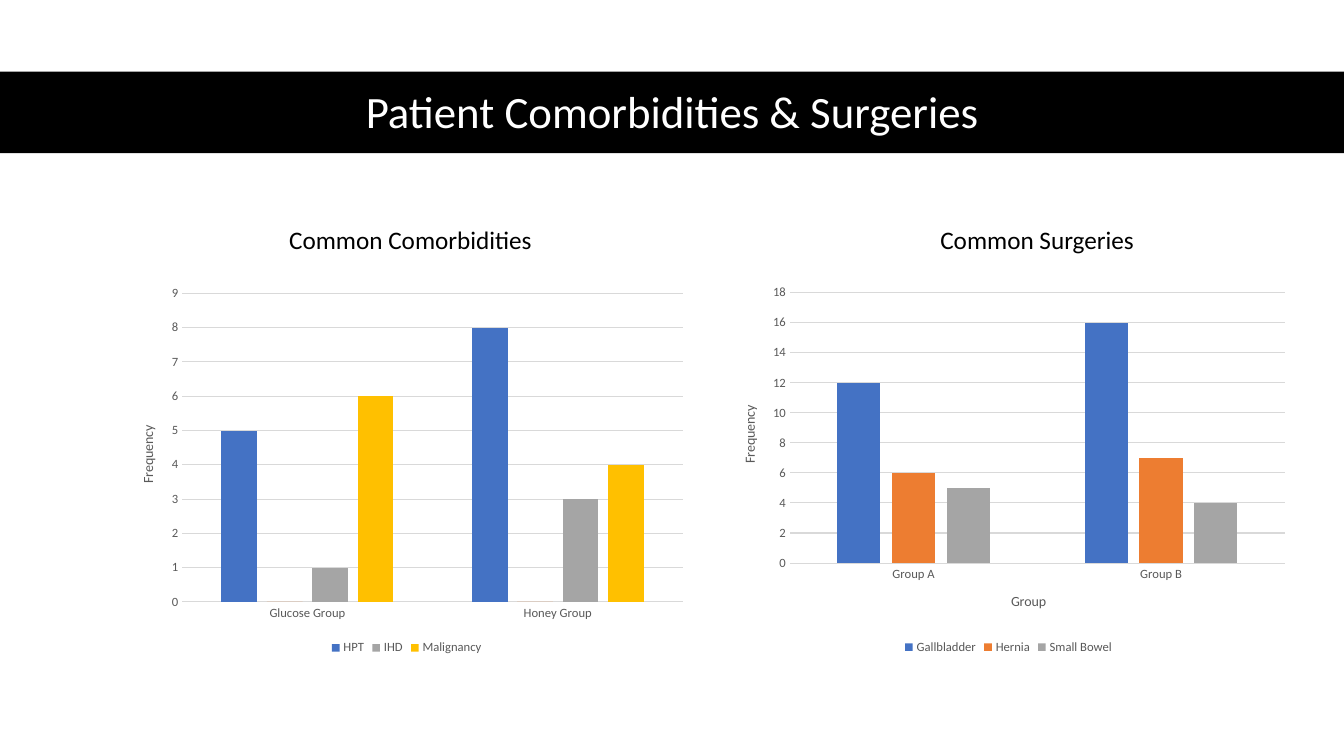
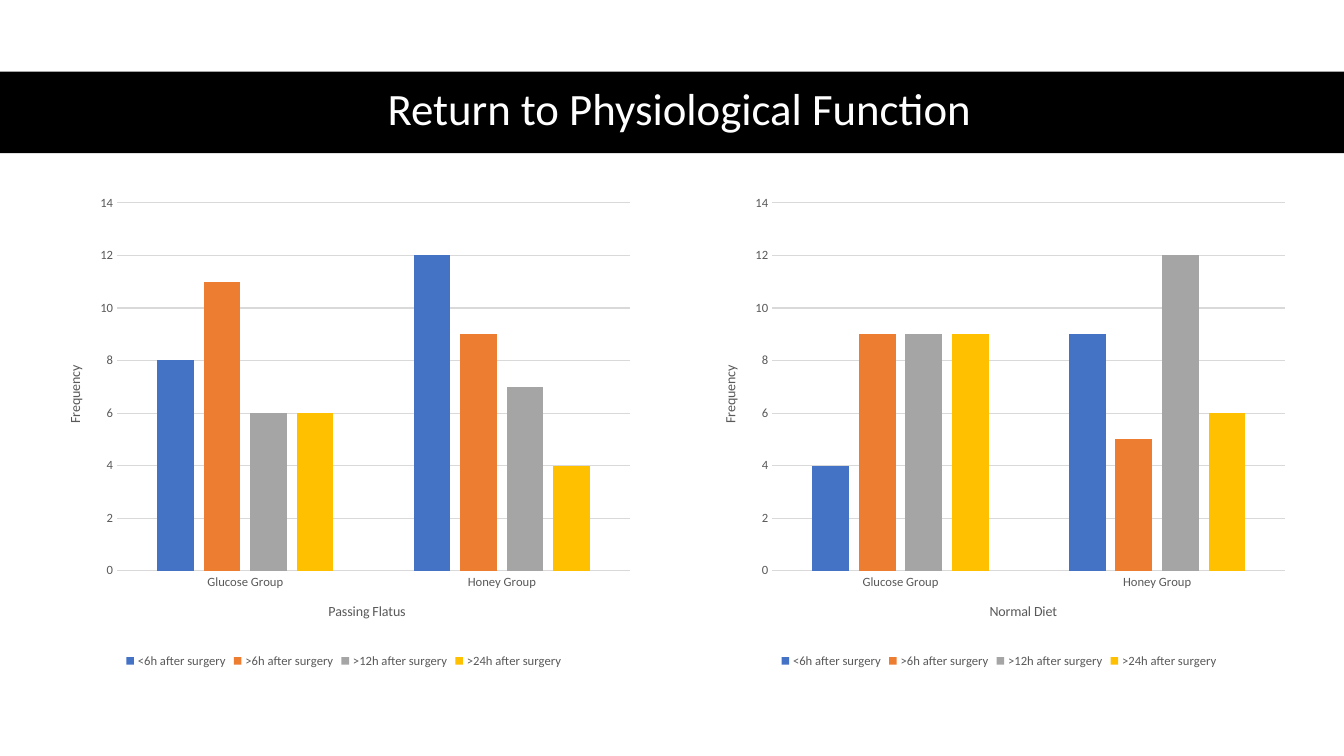
import dataclasses

import pptx
import pptx.chart.data
import pptx.dml.color
import pptx.enum.chart
import pptx.enum.shapes
import pptx.enum.text
import pptx.oxml
import pptx.oxml.ns
import pptx.util


def rgb(code):
    return pptx.dml.color.RGBColor.from_string(code)


# Shared look
@dataclasses.dataclass(frozen=True)
class Theme:
    font: str = "Calibri"
    ink: str = "000000"
    paper: str = "FFFFFF"
    label: str = "595959"
    grid: str = "D9D9D9"
    blue: str = "4472C4"
    orange: str = "ED7D31"
    grey: str = "A5A5A5"
    gold: str = "FFC000"
    title_size: int = 32
    caption_size: int = 18
    axis_title_size: int = 10
    label_size: int = 9
    hairline: float = 0.75


THEME = Theme()
SLIDE_WIDTH = pptx.util.Inches(13.33)
SLIDE_HEIGHT = pptx.util.Inches(7.5)
BAND = (0, 9.47, 100, 10.8)
GROUPS = ["Glucose Group", "Honey Group"]
RECOVERY_TIMES = [
    ("<6h after surgery", THEME.blue),
    (">6h after surgery", THEME.orange),
    (">12h after surgery", THEME.grey),
    (">24h after surgery", THEME.gold),
]


@dataclasses.dataclass(frozen=True)
class FrequencyChart:
    area: tuple             # percent of the slide
    plot: tuple             # shares of the chart
    frequency_at: tuple     # shares of the chart
    categories: list
    series: list            # name, colour, values
    top: int
    step: int
    group_title: str = ""
    group_title_at: tuple = ()
    unlisted: tuple = ()    # series left out of the legend


def area(left, top, width, height):
    """Turn percentages of the slide into lengths."""
    return (int(SLIDE_WIDTH * left / 100), int(SLIDE_HEIGHT * top / 100),
            int(SLIDE_WIDTH * width / 100), int(SLIDE_HEIGHT * height / 100))


def set_font(font, size, color):
    font.name = THEME.font
    font.size = pptx.util.Pt(size)
    font.bold = False
    font.color.rgb = rgb(color)


# Slide frame
def add_titled_slide(deck, heading, title_area):
    slide = deck.slides.add_slide(deck.slide_layouts[5])
    band = slide.shapes.add_shape(
        pptx.enum.shapes.MSO_SHAPE.RECTANGLE, *area(*BAND))
    band.shadow.inherit = False
    band.fill.solid()
    band.fill.fore_color.rgb = rgb(THEME.ink)
    band.line.fill.background()

    title = slide.shapes.title
    title.left, title.top, title.width, title.height = area(*title_area)
    title.text_frame.text = heading
    title.text_frame.vertical_anchor = pptx.enum.text.MSO_ANCHOR.MIDDLE
    paragraph = title.text_frame.paragraphs[0]
    paragraph.alignment = pptx.enum.text.PP_ALIGN.CENTER
    paragraph.line_spacing = 0.9
    set_font(paragraph.font, THEME.title_size, THEME.paper)
    band._element.addnext(title._element)  # title in front of the band
    return slide


def add_caption(slide, text, caption_area):
    frame = slide.shapes.add_textbox(*area(*caption_area)).text_frame
    frame.word_wrap = True
    frame.text = text
    set_font(frame.paragraphs[0].font, THEME.caption_size, THEME.ink)


# Chart parts
def chart_xml(tag, content=""):
    namespace = pptx.oxml.ns.nsdecls("c")
    return pptx.oxml.parse_xml(f"<c:{tag} {namespace}>{content}</c:{tag}>")


def pin(parent, index, shares, inner=False):
    """Fix the place of a chart part, in shares of the chart."""
    for old in parent.findall(pptx.oxml.ns.qn("c:layout")):
        parent.remove(old)
    target = '<c:layoutTarget val="inner"/>' if inner else ""
    modes = '<c:xMode val="edge"/><c:yMode val="edge"/>'
    values = "".join(f'<c:{key} val="{share}"/>'
                     for key, share in zip("xywh", shares))
    parent.insert(index, chart_xml(
        "layout", f"<c:manualLayout>{target}{modes}{values}</c:manualLayout>"))


def add_axis_title(axis, text, shares, rotation="0"):
    frame = axis.axis_title.text_frame
    frame.text = text
    frame._txBody.bodyPr.set("rot", rotation)
    set_font(frame.paragraphs[0].font, THEME.axis_title_size, THEME.label)
    pin(axis.axis_title._element, 1, shares)


def style_axis(axis):
    axis.major_tick_mark = pptx.enum.chart.XL_TICK_MARK.NONE
    axis.minor_tick_mark = pptx.enum.chart.XL_TICK_MARK.NONE
    set_font(axis.tick_labels.font, THEME.label_size, THEME.label)


def style_line(line):
    line.color.rgb = rgb(THEME.grid)
    line.width = pptx.util.Pt(THEME.hairline)


def add_legend(chart, unlisted):
    chart.has_legend = True
    legend = chart.legend
    legend.position = pptx.enum.chart.XL_LEGEND_POSITION.BOTTOM
    legend.include_in_layout = False
    set_font(legend.font, THEME.label_size, THEME.label)
    for place, index in enumerate(unlisted, start=1):
        legend._element.insert(place, chart_xml(
            "legendEntry", f'<c:idx val="{index}"/><c:delete val="1"/>'))


def add_frequency_chart(slide, model):
    data = pptx.chart.data.CategoryChartData()
    data.categories = model.categories
    for name, _, values in model.series:
        data.add_series(name, values)
    chart = slide.shapes.add_chart(
        pptx.enum.chart.XL_CHART_TYPE.COLUMN_CLUSTERED,
        *area(*model.area), data).chart
    chart.has_title = False
    set_font(chart.font, THEME.axis_title_size, THEME.ink)

    # Columns
    columns = chart.plots[0]
    columns.vary_by_categories = False
    columns.gap_width = 219
    columns.overlap = -27
    for series, (_, color, _) in zip(columns.series, model.series):
        series.format.fill.solid()
        series.format.fill.fore_color.rgb = rgb(color)
    pin(chart._chartSpace.chart.plotArea, 0, model.plot, inner=True)

    # Axes and legend
    groups, frequency = chart.category_axis, chart.value_axis
    for axis in (groups, frequency):
        style_axis(axis)
    style_line(groups.format.line)
    frequency.format.line.fill.background()
    style_line(frequency.major_gridlines.format.line)
    frequency.minimum_scale = 0
    frequency.maximum_scale = model.top
    frequency.major_unit = model.step
    add_axis_title(frequency, "Frequency", model.frequency_at, "-5400000")
    if model.group_title:
        add_axis_title(groups, model.group_title, model.group_title_at)
    add_legend(chart, model.unlisted)


def recovery_chart(left, measure, measure_at, counts):
    return FrequencyChart(
        area=(left, 24.93, 44.4, 64), plot=(0.12, 0.03, 0.86, 0.76),
        frequency_at=(0.03, 0.36), categories=GROUPS,
        series=[(*time, values) for time, values in zip(RECOVERY_TIMES, counts)],
        top=14, step=2, group_title=measure, group_title_at=measure_at)


# Slides
def add_comorbidities_slide(deck):
    slide = add_titled_slide(deck, "Patient Comorbidities & Surgeries",
                             (6.9, 9.87, 86.26, 10.4))
    add_frequency_chart(slide, FrequencyChart(
        area=(53.63, 36.7, 42.83, 50.4), plot=(0.12, 0.04, 0.86, 0.71),
        frequency_at=(0.03, 0.33), categories=["Group A", "Group B"],
        series=[("Gallbladder", THEME.blue, (12, 16)),
                ("Hernia", THEME.orange, (6, 7)),
                ("Small Bowel", THEME.grey, (5, 4))],
        top=18, step=2, group_title="Group", group_title_at=(0.5, 0.82)))
    add_frequency_chart(slide, FrequencyChart(
        area=(8.85, 36.8, 42.83, 50.4), plot=(0.11, 0.04, 0.87, 0.81),
        frequency_at=(0.03, 0.38), categories=GROUPS,
        series=[("HPT", THEME.blue, (5, 8)),
                ("Series 2", THEME.orange, (0, 0)),
                ("IHD", THEME.grey, (1, 3)),
                ("Malignancy", THEME.gold, (6, 4))],
        top=9, step=1, unlisted=(1,)))
    add_caption(slide, "Common Comorbidities", (20.78, 29.07, 34, 5.33))
    add_caption(slide, "Common Surgeries", (69.23, 29.07, 29.86, 5.33))


def add_recovery_slide(deck):
    slide = add_titled_slide(deck, "Return to Physiological Function",
                             (4.57, 9.33, 92, 10.8))
    add_frequency_chart(slide, recovery_chart(
        52.13, "Normal Diet", (0.48, 0.85),
        [(4, 9), (9, 5), (9, 12), (9, 6)]))
    add_frequency_chart(slide, recovery_chart(
        3.38, "Passing Flatus", (0.47, 0.85),
        [(8, 12), (11, 9), (6, 7), (6, 4)]))


def main():
    deck = pptx.Presentation()
    deck.slide_width, deck.slide_height = SLIDE_WIDTH, SLIDE_HEIGHT
    add_comorbidities_slide(deck)
    add_recovery_slide(deck)
    deck.save("out.pptx")


if __name__ == "__main__":
    main()
